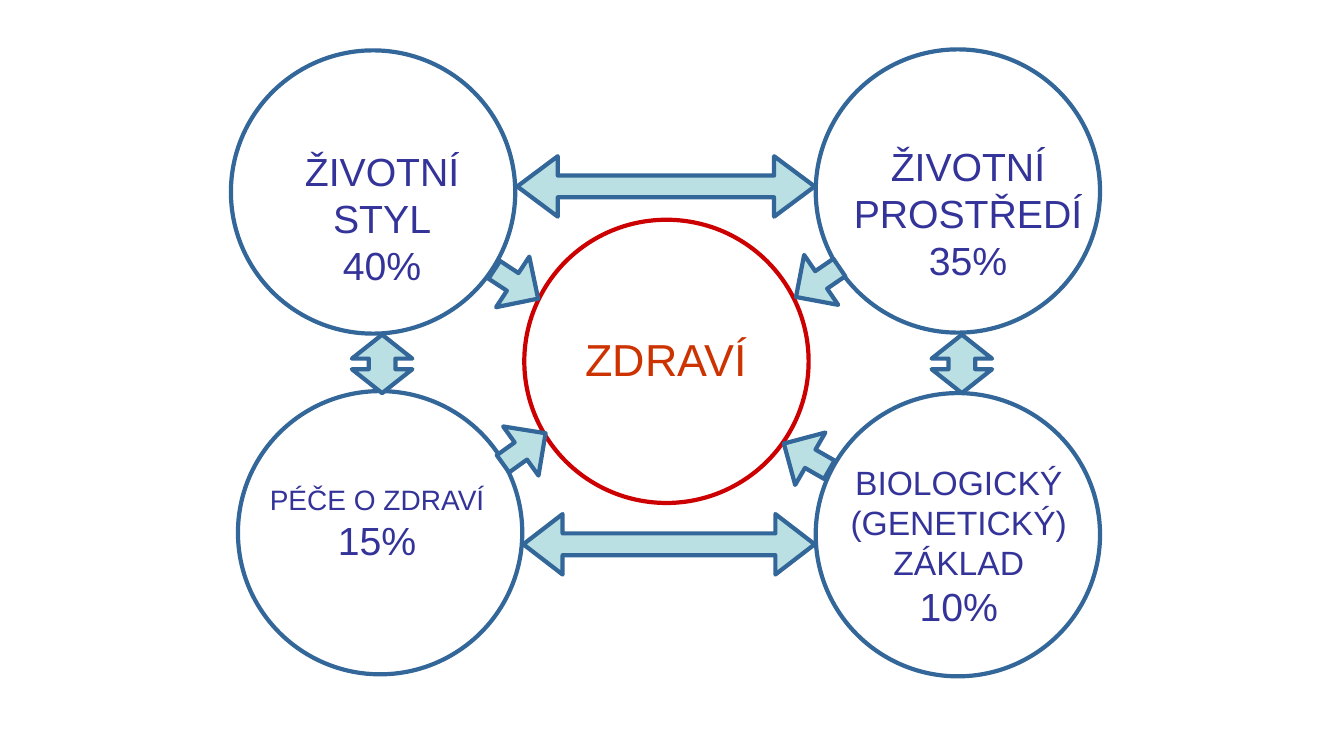
from pptx import Presentation
from pptx.dml.color import RGBColor
from pptx.enum import shapes, text
from pptx.util import Inches, Pt

BLUE = RGBColor(0x33, 0x66, 0x99)
RED = RGBColor(0xCC, 0x00, 0x00)
PALE_TEAL = RGBColor(0xBB, 0xE0, 0xE3)
INDIGO = RGBColor(0x33, 0x33, 0x99)
ORANGE = RGBColor(0xCC, 0x33, 0x00)

CIRCLE_SIZE = (2.82, 2.81)
CENTER = text.PP_ALIGN.CENTER

# Circle position, label box and (line, size) pairs of each factor
FACTORS = [
    ((2.29, 0.5), (2.74, 1.41, 2.1, 1.5), [("ŽIVOTNÍ STYL", 28), ("40%", 28)]),
    ((8.09, 0.49), (8.34, 1.36, 2.52, 1.5), [("ŽIVOTNÍ PROSTŘEDÍ", 28), ("35%", 28)]),
    ((2.36, 3.88), (2.45, 4.74, 2.58, 0.91), [("PÉČE O ZDRAVÍ", 20), ("15%", 28)]),
    ((8.09, 3.9), (8.16, 4.53, 2.7, 1.78),
     [("BIOLOGICKÝ", 24), ("(GENETICKÝ)", 24), ("ZÁKLAD", 24), ("10%", 28)]),
]

# Position and rotation of each arrow pointing at the central circle
INWARD_ARROWS = [
    (4.86, 2.52, 33.3),
    (4.94, 4.15, 324.3),
    (7.85, 2.5, 145.7),
    (7.74, 4.23, 209.9),
]

# Box, rotation and adjustments of each arrow between neighbouring factors
LINKING_ARROWS = [
    ((5.13, 1.55, 2.95, 0.6), 0, (0.36, 0.67)),
    ((5.19, 5.1, 2.89, 0.6), 0, (0.36, 0.65)),
    ((3.5, 3.31, 0.58, 0.6), 270, (0.44, 0.41)),
    ((9.25, 3.31, 0.58, 0.6), 270, (0.44, 0.41)),
]


def add_outlined_shape(slide, kind, box, line=BLUE, fill=None, rotation=0, adjustments=()):
    shape = slide.shapes.add_shape(kind, *map(Inches, box))
    shape.shadow.inherit = False
    shape.line.color.rgb = line
    shape.line.width = Pt(3)
    if fill is None:
        shape.fill.background()
    else:
        shape.fill.solid()
        shape.fill.fore_color.rgb = fill
    shape.rotation = rotation
    for index, value in enumerate(adjustments):
        shape.adjustments[index] = value


def add_label(slide, box, lines, color=INDIGO, align=CENTER):
    """Write (line, size) pairs as the paragraphs of one text box."""
    frame = slide.shapes.add_textbox(*map(Inches, box)).text_frame
    frame.word_wrap = True
    for index, (line, size) in enumerate(lines):
        paragraph = frame.paragraphs[0] if index == 0 else frame.add_paragraph()
        paragraph.alignment = align
        run = paragraph.add_run()
        run.text = line
        run.font.name = "Arial"
        run.font.size = Pt(size)
        run.font.color.rgb = color


def add_health(slide, position):
    left, top = position
    add_outlined_shape(slide, shapes.MSO_SHAPE.OVAL, (*position, *CIRCLE_SIZE), line=RED)
    add_label(slide, (left + 0.51, top + 1.06, 1.99, 0.63), [("ZDRAVÍ", 32)],
              color=ORANGE, align=text.PP_ALIGN.LEFT)


def add_factor(slide, position, label_box, lines):
    add_outlined_shape(slide, shapes.MSO_SHAPE.OVAL, (*position, *CIRCLE_SIZE))
    add_label(slide, label_box, lines)


def add_arrows(slide):
    for left, top, rotation in INWARD_ARROWS:
        add_outlined_shape(slide, shapes.MSO_SHAPE.RIGHT_ARROW, (left, top, 0.52, 0.6),
                           fill=PALE_TEAL, rotation=rotation, adjustments=(0.35, 0.58))
    for box, rotation, adjustments in LINKING_ARROWS:
        add_outlined_shape(slide, shapes.MSO_SHAPE.LEFT_RIGHT_ARROW, box,
                           fill=PALE_TEAL, rotation=rotation, adjustments=adjustments)


def main():
    presentation = Presentation()
    presentation.slide_width = Inches(13.33)
    presentation.slide_height = Inches(7.5)
    slide = presentation.slides.add_slide(presentation.slide_layouts[6])
    add_health(slide, (5.2, 2.18))
    for factor in FACTORS:
        add_factor(slide, *factor)
    add_arrows(slide)
    presentation.save("out.pptx")


if __name__ == "__main__":
    main()
